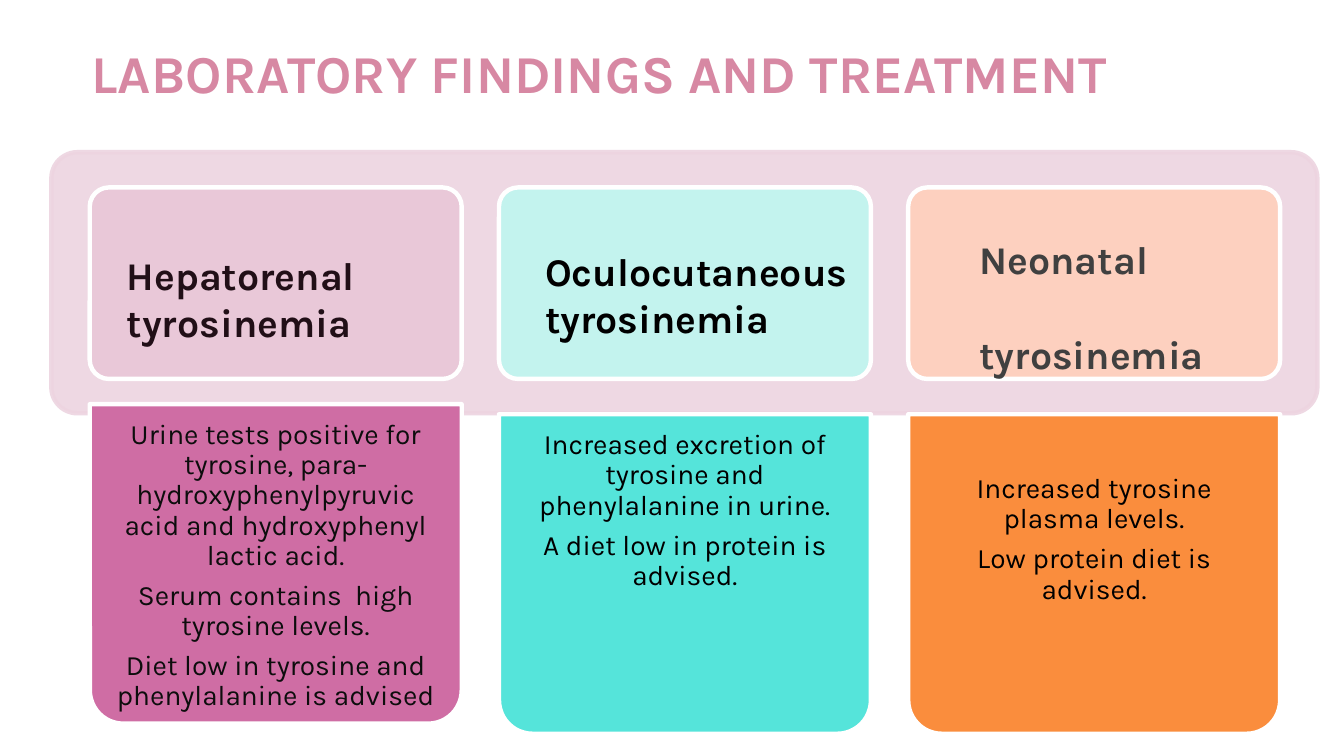
from lxml.etree import SubElement
from pptx import Presentation
from pptx.dml.color import RGBColor
from pptx.enum.shapes import MSO_SHAPE as SHAPE
from pptx.enum.text import MSO_ANCHOR as ANCHOR, PP_ALIGN as ALIGN
from pptx.oxml.ns import qn
from pptx.util import Pt

CARD_LEFT, CARD_STEP, CARD_WIDTH = 64.1, 292.3, 265.7
HEAD_TOP, HEAD_HEIGHT, PANEL_HEIGHT = 133.9, 136.8, 228.2

FINDINGS = [
    dict(heading=["Hepatorenal", "tyrosinemia"], head_at=(83.5, 175.7),
         head_color="210F17", head_fill="E9C8D8", panel_fill="CF6DA4",
         panel_top=288.7, body_color="0D0D0D",
         body=["Urine tests positive for tyrosine, para-hydroxyphenylpyruvic acid "
               "and hydroxyphenyl lactic acid.",
               "Serum contains  high tyrosine levels.",
               "Diet low in tyrosine and phenylalanine is advised"]),
    dict(heading=["Oculocutaneous", "tyrosinemia"], head_at=(382.3, 172.8),
         head_color="000000", head_fill="C3F3EE", panel_fill="55E4DA",
         panel_top=295.9, body_color="000000",
         body=["Increased excretion of tyrosine and phenylalanine in urine.",
               "A diet low in protein is advised."]),
    dict(heading=["Neonatal", "tyrosinemia"], head_at=(692.6, 164.9), head_gap=33.6,
         head_color="404040", head_fill="FDD0BF", panel_fill="FA8D3D",
         panel_top=295.9, body_color="000000", body_inset=43,
         body=["Increased tyrosine plasma levels.", "Low protein diet is advised."]),
]


def rgb(color):
    """Turn a hex string into a colour."""
    return RGBColor.from_string(color)


def set_alpha(fill, percent):
    """Make a solid fill partly transparent."""
    color = fill._xPr.find(qn("a:solidFill"))[0]
    SubElement(color, qn("a:alpha")).set("val", str(percent * 1000))


def add_block(s, kind, box, color, line="FFFFFF", adjust=(0.1,), rotation=0, alpha=None):
    """Add a filled, outlined preset shape."""
    sp = s.shapes.add_shape(kind, *map(Pt, box))
    sp.shadow.inherit = False
    sp.rotation = rotation
    for i, value in enumerate(adjust):
        sp.adjustments[i] = value
    sp.fill.solid()
    sp.fill.fore_color.rgb = rgb(color)
    sp.line.color.rgb = rgb(line)
    sp.line.width = Pt(3.15)
    if alpha:
        set_alpha(sp.fill, alpha)
        set_alpha(sp.line.fill, alpha)
    return sp


def add_text(s, box, lines, size, color, bold=False, align=ALIGN.LEFT, anchor=ANCHOR.TOP,
             insets=(7.2, 3.6, 7.2, 3.6), spacing=1.0, gap=0, wrap=True):
    """Add a text box with one paragraph for each line."""
    tf = s.shapes.add_textbox(*map(Pt, box)).text_frame
    tf.word_wrap = wrap
    tf.vertical_anchor = anchor
    tf.margin_left, tf.margin_top, tf.margin_right, tf.margin_bottom = map(Pt, insets)
    for i, line in enumerate(lines):
        p = tf.paragraphs[0] if i == 0 else tf.add_paragraph()
        p.alignment = align
        p.line_spacing = spacing
        p.space_before = Pt(gap if i else 0)
        r = p.add_run()
        r.text = line
        r.font.name = "Karla"
        r.font.size = Pt(size)
        r.font.bold = bold
        r.font.color.rgb = rgb(color)


def add_finding(s, left, item):
    """Add one heading card with the panel below it."""
    top = item["panel_top"]
    add_block(s, SHAPE.ROUNDED_RECTANGLE, (left, HEAD_TOP, CARD_WIDTH, HEAD_HEIGHT),
              item["head_fill"])
    add_block(s, SHAPE.ROUND_2_SAME_RECTANGLE, (left, top, CARD_WIDTH, PANEL_HEIGHT),
              item["panel_fill"], adjust=(0.105, 0), rotation=180)
    add_text(s, (left + 7.2, top, CARD_WIDTH - 14.4, PANEL_HEIGHT - 7.2), item["body"],
             20, item["body_color"], align=ALIGN.CENTER, spacing=0.9, gap=7,
             insets=(11.5, item.get("body_inset", 11.5), 11.5, 11.5))
    add_text(s, (*item["head_at"], 234, 75), item["heading"], 28, item["head_color"],
             bold=True, gap=item.get("head_gap", 0), wrap=False)


def main():
    """Build the slide and save it."""
    prs = Presentation()
    prs.slide_width, prs.slide_height = Pt(960), Pt(540)
    s = prs.slides.add_slide(prs.slide_layouts[6])
    add_text(s, (61.9, -15.8, 760.3, 90), ["LABORATORY FINDINGS AND TREATMENT"], 38,
             "D788A3", bold=True, anchor=ANCHOR.BOTTOM, insets=(3.6, 0, 3.6, 0))
    add_block(s, SHAPE.ROUNDED_RECTANGLE, (36.7, 108.7, 904.3, 186.5), "EDD4E0",
              line="EDD4E0", alpha=90)
    for i, item in enumerate(FINDINGS):
        add_finding(s, CARD_LEFT + i * CARD_STEP, item)
    prs.save("out.pptx")


if __name__ == "__main__":
    main()
